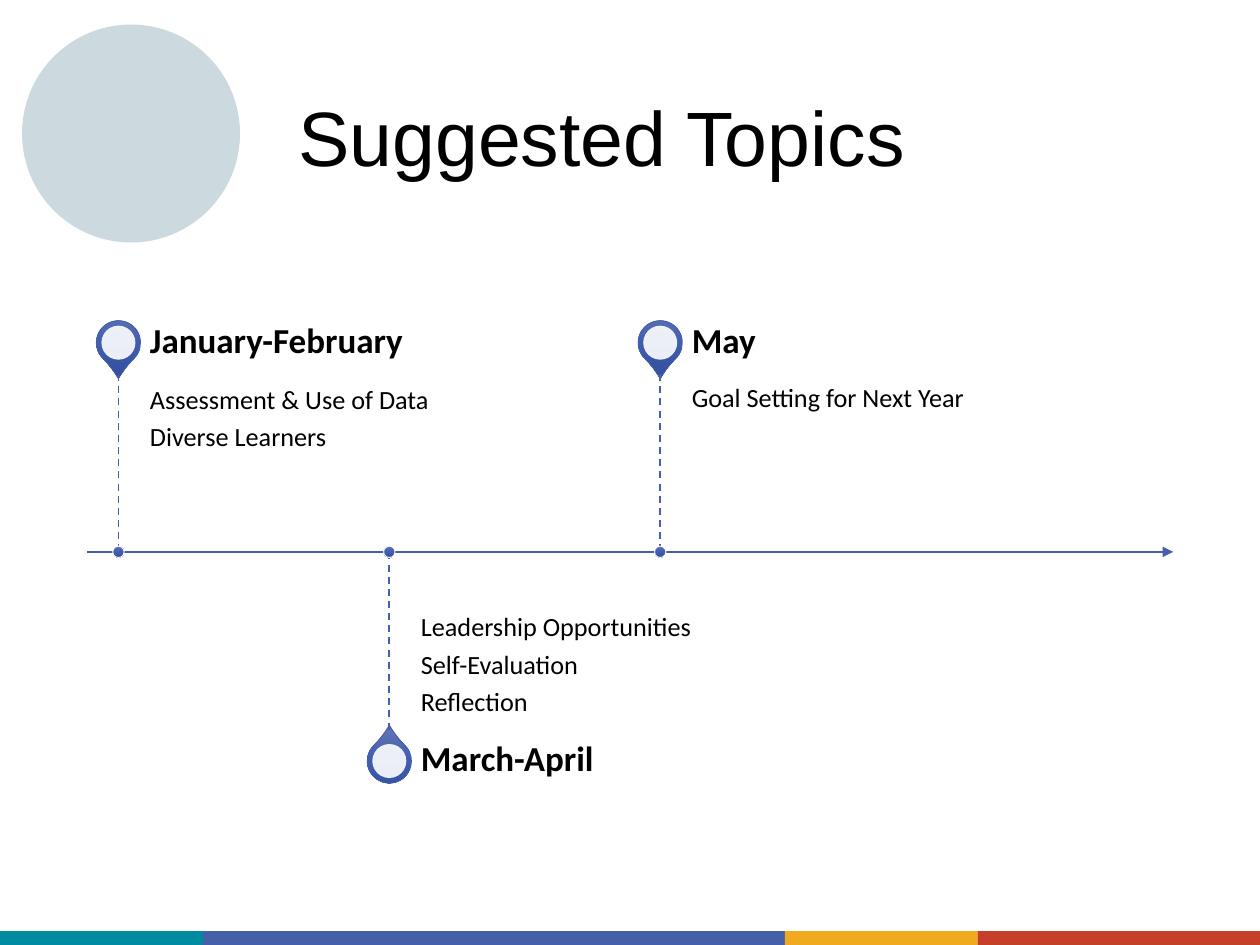
from copy import deepcopy

from lxml.etree import SubElement
from pptx import Presentation
from pptx.dml.color import RGBColor
from pptx.enum.dml import MSO_LINE
from pptx.enum.shapes import MSO_CONNECTOR, MSO_SHAPE
from pptx.enum.text import MSO_ANCHOR
from pptx.oxml.ns import qn
from pptx.util import Inches, Pt

COLORS = {
    "text": "000000", "white": "FFFFFF", "teal": "008CA0", "blue": "455FA9",
    "amber": "EFAA1F", "red": "C63F28", "pale": "CCDADF",
    "light": "6073B4", "mid": "405DAE", "dark": "34509F",
}
AXIS_Y = 4.38
PIN_GAP = 2.15
FOOTER = [("teal", 0, 1.61), ("blue", 1.61, 4.62), ("amber", 6.23, 1.53), ("red", 7.76, 2.24)]
PERIODS = [
    ("January-February", ["Assessment & Use of Data", "Diverse Learners"]),
    ("March-April", ["Leadership Opportunities", "Self-Evaluation", "Reflection"]),
    ("May", ["Goal Setting for Next Year"]),
]


def color(name):
    return RGBColor.from_string(COLORS[name])


class TimelineSlide:
    def __init__(self, slide):
        self.shapes = slide.shapes

    def shape(self, kind, x, y, w, h, fill=None, line=None):
        sp = self.shapes.add_shape(kind, Inches(x), Inches(y), Inches(w), Inches(h))
        sp.shadow.inherit = False
        if fill:
            sp.fill.solid()
            sp.fill.fore_color.rgb = color(fill)
        else:
            self.shade(sp)
        if line:
            sp.line.color.rgb = color(line)
            sp.line.width = Pt(0.5)
        else:
            sp.line.fill.background()
        return sp

    def circle(self, cx, cy, size, fill=None, line=None):
        return self.shape(MSO_SHAPE.OVAL, cx - size / 2, cy - size / 2, size, size, fill, line)

    def shade(self, sp):
        """Fill from light at the top to dark at the bottom, however the shape is turned."""
        sp.fill.gradient()
        grad = sp.element.spPr.find(qn("a:gradFill"))
        grad.set("rotWithShape", "0")
        grad.find(qn("a:lin")).set("ang", "5400000")
        stops = grad.find(qn("a:gsLst"))
        stops.insert(1, deepcopy(stops[0]))
        for stop, name, pos in zip(sp.fill.gradient_stops, ("light", "mid", "dark"), (0, 0.5, 1)):
            stop.color.rgb = color(name)
            stop.position = pos

    def line(self, x1, y1, x2, y2, width):
        cn = self.shapes.add_connector(
            MSO_CONNECTOR.STRAIGHT, Inches(x1), Inches(y1), Inches(x2), Inches(y2))
        cn.line.color.rgb = color("blue")
        cn.line.width = Pt(width)
        SubElement(cn.element.spPr, qn("a:effectLst"))
        return cn

    def arrow(self, x1, y1, x2, y2, width):
        cn = self.line(x1, y1, x2, y2, width)
        SubElement(cn.line._get_or_add_ln(), qn("a:tailEnd"), type="triangle")

    def text(self, lines, x, y, w, h, size, anchor=MSO_ANCHOR.MIDDLE,
             insets=(0, 0, 0.14, 0), font="Calibri", bold=False, after=0):
        tf = self.shapes.add_textbox(Inches(x), Inches(y), Inches(w), Inches(h)).text_frame
        tf.word_wrap = True
        tf.vertical_anchor = anchor
        tf.margin_left, tf.margin_top, tf.margin_right, tf.margin_bottom = map(Inches, insets)
        tf.text = "\n".join(lines)
        for p in tf.paragraphs:
            p.line_spacing = 0.9
            p.space_after = Pt(after)
            p.font.name = font
            p.font.size = Pt(size)
            p.font.bold = bold
            p.font.color.rgb = color("text")

    def pin(self, x, y, rotation):
        sp = self.shape(MSO_SHAPE.TEAR, x - 0.175, y - 0.175, 0.35, 0.35, line="blue")
        sp.adjustments[0] = 1.15
        sp.rotation = rotation
        hole = self.circle(x, y, 0.27, "white")
        rgb = hole.element.spPr.find(qn("a:solidFill"))[0]
        SubElement(rgb, qn("a:alpha"), val="90000")

    def period(self, x, heading, topics, above):
        """Pin, heading and topics on one side of the axis, tied to it by a dashed line."""
        side = -1 if above else 1
        pin_y = AXIS_Y + side * 1.66
        self.pin(x, pin_y, 135 if above else 315)
        if above:
            top, anchor, insets = AXIS_Y - 1.41, MSO_ANCHOR.TOP, (0, 0.1, 0.1, 0.16)
        else:
            top, anchor, insets = AXIS_Y, MSO_ANCHOR.BOTTOM, (0, 0.16, 0, 0.1)
        self.text(topics, x + 0.25, top, 3.58, 1.41, 15, anchor, insets, after=5)
        self.text([heading], x + 0.25, pin_y - 0.25, 3.58, 0.49, 20, bold=True)
        stem = self.line(x, AXIS_Y + side * 1.41, x, AXIS_Y, 1)
        stem.line.dash_style = MSO_LINE.DASH
        self.circle(x, AXIS_Y, 0.09, line="white")


def main():
    prs = Presentation()
    prs.slide_width, prs.slide_height = Inches(10), Inches(7.5)
    s = TimelineSlide(prs.slides.add_slide(prs.slide_layouts[6]))

    for name, x, w in FOOTER:
        s.shape(MSO_SHAPE.RECTANGLE, x, 7.39, w, 0.11, name)
    s.text(["Suggested Topics"], 2.27, 0.4, 7.04, 1.45, 44,
           insets=(0.1, 0.05, 0.1, 0.05), font="Arial")
    s.arrow(0.69, AXIS_Y, 9.31, AXIS_Y, 1.5)
    for i, (heading, topics) in enumerate(PERIODS):
        s.period(0.94 + i * PIN_GAP, heading, topics, above=i % 2 == 0)
    s.circle(1.04, 1.06, 1.73, "pale")

    prs.save("out.pptx")


if __name__ == "__main__":
    main()
